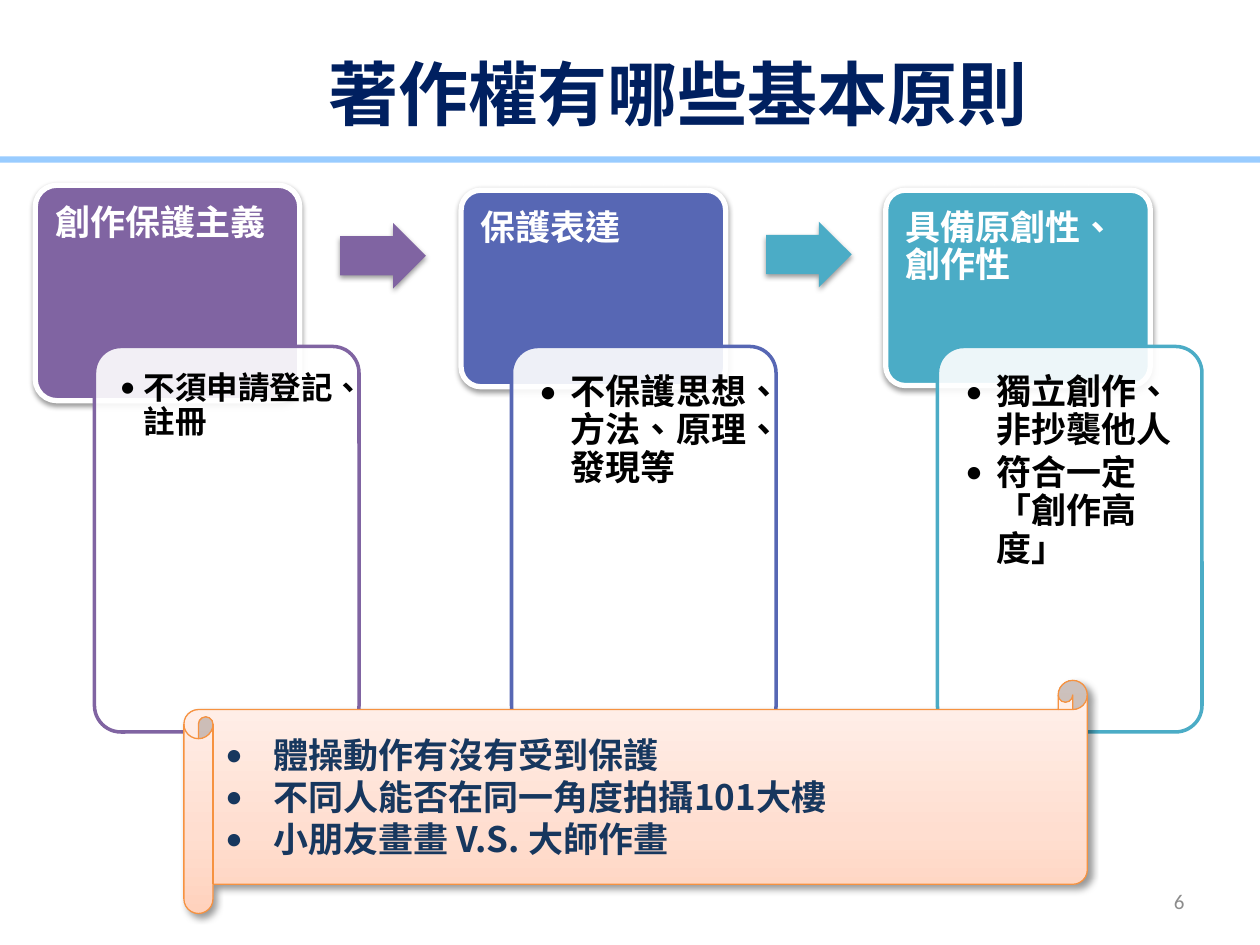
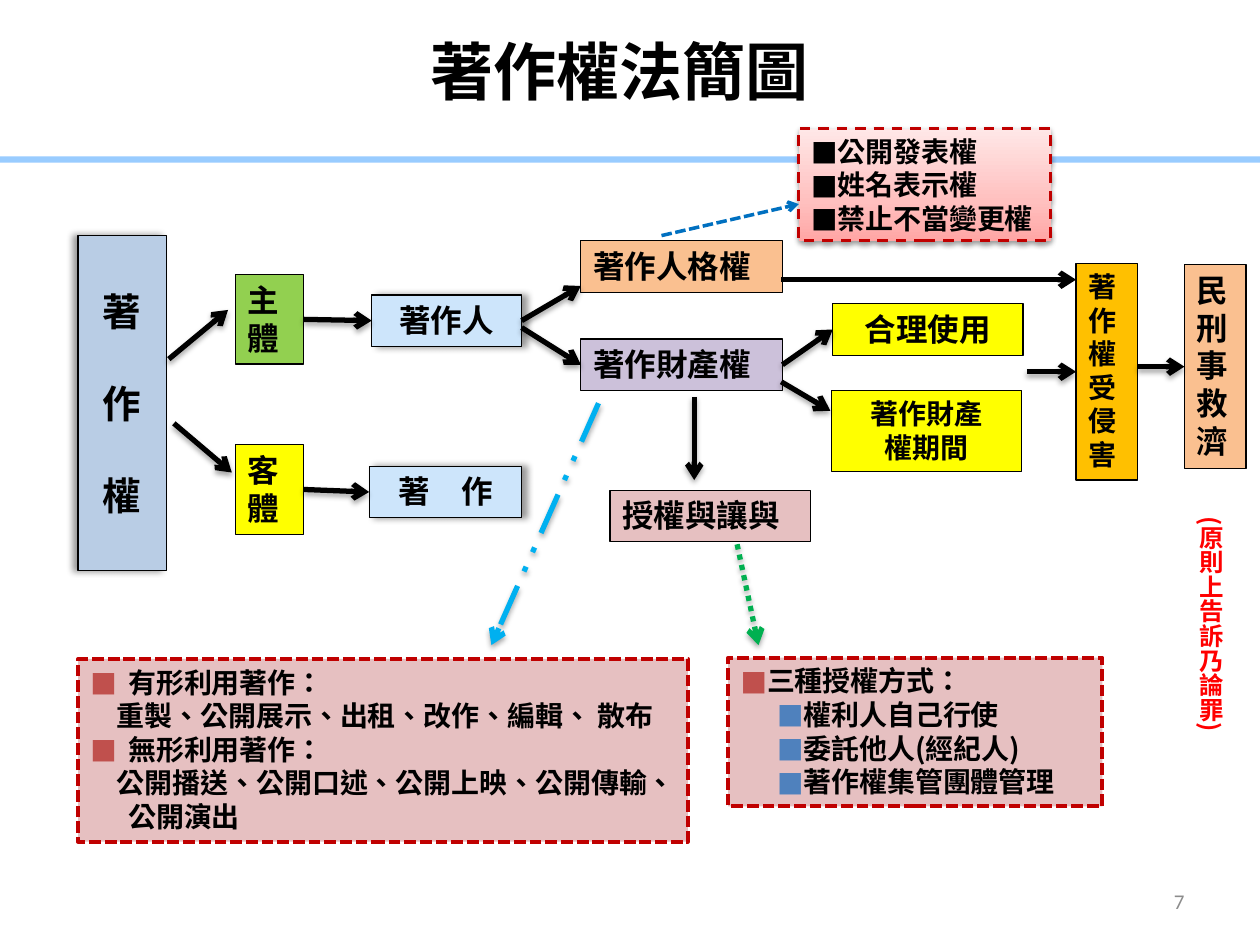
from dataclasses import dataclass
from typing import Optional

from lxml import etree
from pptx import Presentation
from pptx.dml.color import RGBColor
from pptx.enum.dml import MSO_LINE
from pptx.enum.shapes import MSO_CONNECTOR, MSO_SHAPE
from pptx.enum.text import MSO_ANCHOR, MSO_AUTO_SIZE, PP_ALIGN
from pptx.oxml.ns import qn
from pptx.util import Pt

PX = 9144
LEFT, CENTER, RIGHT = PP_ALIGN.LEFT, PP_ALIGN.CENTER, PP_ALIGN.RIGHT
TOP, MIDDLE = MSO_ANCHOR.TOP, MSO_ANCHOR.MIDDLE
RECTANGLE, ROUNDED = MSO_SHAPE.RECTANGLE, MSO_SHAPE.ROUNDED_RECTANGLE
RIGHT_ARROW, SCROLL = MSO_SHAPE.RIGHT_ARROW, MSO_SHAPE.HORIZONTAL_SCROLL
STRAIGHT = MSO_CONNECTOR.STRAIGHT
DASH, SHORT_DASH = MSO_LINE.DASH, MSO_LINE.SQUARE_DOT
DOT, DASH_DOT_DOT = MSO_LINE.ROUND_DOT, MSO_LINE.DASH_DOT_DOT
LEFT_SIDE, RIGHT_SIDE = 1, 3
FONT, LATIN_FONT = "Noto Sans CJK SC", "Calibri"

COLOURS = {
    "black": "000000", "white": "FFFFFF", "navy": "002060", "band": "99CCFF",
    "grey": "8C8C8C", "purple": "8064A2", "indigo": "5767B4", "teal": "4BACC6",
    "scroll_line": "F69240", "scroll_text": "17375E", "steel": "B9CDE5",
    "green": "92D050", "yellow": "FFFF00", "sky": "CDE5FB", "rose": "E6C0C1",
    "peach": "FAC090", "lilac": "CCC1DA", "amber": "FFC000", "crimson": "C00000",
    "bullet_red": "C0504D", "bullet_blue": "4F81BD", "cyan": "00B0F0",
    "emerald": "00B050", "blue": "0070C0", "red": "FF0000",
}
SCROLL_GRADIENT = ((0, "FFD2BD"), (35, "FFDED0"), (100, "FFF2ED"))
PINK_GRADIENT = ((0, "FFA6A5"), (35, "FFC0BF"), (100, "FFE7E7"))

Place = tuple[int, int, int, int]
Point = tuple[int, int]


@dataclass(frozen=True)
class Shadow:
    opacity: int
    blur: float
    distance: float
    angle: int


SOFT = Shadow(38, 3.1, 1.6, 90)
LINE_SHADOW = Shadow(35, 3.1, 1.8, 90)
CORNER, TO_LEFT, TO_RIGHT = (Shadow(40, 4, 3, angle) for angle in (45, 180, 0))


@dataclass(frozen=True)
class Style:
    size: int
    colour: str = "black"
    align: PP_ALIGN = LEFT
    bold: bool = True
    font: str = FONT
    line_spacing: float = 1.0
    gap: int = 0


@dataclass(frozen=True)
class Item:
    text: str
    margin: int = 0
    indent: int = 0
    bullet: str = ""
    bullet_colour: str = ""


@dataclass(frozen=True)
class Card:
    header: Place
    heading: str
    body_left: int
    points: tuple[str, ...]
    colour: str
    size: int
    inset: int
    hang: int


@dataclass(frozen=True)
class Box:
    name: str
    place: Place
    fill: str
    items: tuple[Item, ...]
    style: Style
    line: str = "black"
    width: float = 0.75
    dash: Optional[MSO_LINE] = None
    shadow: Optional[Shadow] = None
    anchor: MSO_ANCHOR = TOP


@dataclass(frozen=True)
class Arrow:
    begin: Point
    end: Point
    begin_box: str = ""
    end_box: str = ""
    colour: str = "black"
    width: float = 3
    dash: Optional[MSO_LINE] = None
    shadow: Optional[Shadow] = LINE_SHADOW


def rgb(name: str) -> RGBColor:
    return RGBColor.from_string(COLOURS[name])


def add_colour(parent, value: str, opacity: int = 100) -> None:
    colour = etree.SubElement(parent, qn("a:srgbClr"), val=value)
    if opacity < 100:
        etree.SubElement(colour, qn("a:alpha"), val=str(opacity * 1000))


def cast_shadow(effects, shadow: Shadow) -> None:
    outer = etree.SubElement(
        effects, qn("a:outerShdw"), blurRad=str(Pt(shadow.blur)),
        dist=str(Pt(shadow.distance)), dir=str(shadow.angle * 60000), rotWithShape="0")
    add_colour(outer, COLOURS["black"], shadow.opacity)


def set_line(line, colour: str, width: float, dash: Optional[MSO_LINE] = None) -> None:
    line.color.rgb = rgb(colour)
    line.width = Pt(width)
    if dash is not None:
        line.dash_style = dash


def add_figure(slide, kind: MSO_SHAPE, place: Place, fill: str, line: str = "",
               width: float = 0.75, dash: Optional[MSO_LINE] = None,
               shadow: Optional[Shadow] = None):
    shape = slide.shapes.add_shape(kind, *(PX * value for value in place))
    shape.shadow.inherit = False
    if fill:
        shape.fill.solid()
        shape.fill.fore_color.rgb = rgb(fill)
    if line:
        set_line(shape.line, line, width, dash)
    else:
        shape.line.fill.background()
    if shadow:
        cast_shadow(shape._element.spPr.find(qn("a:effectLst")), shadow)
    return shape


def fill_gradient(shape, stops: tuple[tuple[int, str], ...]) -> None:
    shape.fill.gradient()
    shape.fill.gradient_angle = 90
    stop_list = shape._element.spPr.find(".//" + qn("a:gsLst"))
    stop_list.clear()
    for position, colour in stops:
        add_colour(etree.SubElement(stop_list, qn("a:gs"), pos=str(position * 1000)), colour)


def add_bullet(paragraph, item: Item) -> None:
    properties = paragraph._p.get_or_add_pPr()
    properties.set("marL", str(item.margin * PX))
    properties.set("indent", str(item.indent * PX))
    if not item.bullet:
        etree.SubElement(properties, qn("a:buNone"))
        return
    if item.bullet_colour:
        add_colour(etree.SubElement(properties, qn("a:buClr")), COLOURS[item.bullet_colour])
    etree.SubElement(properties, qn("a:buFont"), typeface=LATIN_FONT)
    etree.SubElement(properties, qn("a:buChar"), char=item.bullet)


def write(shape, items: tuple[Item, ...], style: Style, anchor: MSO_ANCHOR = TOP,
          insets: Place = (10, 5, 10, 5)) -> None:
    frame = shape.text_frame
    frame.word_wrap = True
    frame.auto_size = MSO_AUTO_SIZE.NONE
    frame.vertical_anchor = anchor
    frame.margin_left, frame.margin_top, frame.margin_right, frame.margin_bottom = (
        PX * value for value in insets)
    for index, item in enumerate(items):
        paragraph = frame.add_paragraph() if index else frame.paragraphs[0]
        add_bullet(paragraph, item)
        paragraph.alignment = style.align
        paragraph.line_spacing = style.line_spacing
        paragraph.space_before = Pt(style.gap if index else 0)
        run = paragraph.add_run()
        run.text = item.text
        run.font.name = style.font
        run.font.size = Pt(style.size)
        run.font.bold = style.bold
        run.font.color.rgb = rgb(style.colour)
        properties = run._r.get_or_add_rPr()
        properties.set("lang", "zh-TW")
        properties.find(qn("a:latin")).addnext(
            etree.Element(qn("a:ea"), typeface=style.font))


def add_text(slide, place: Place, text: str, style: Style, anchor: MSO_ANCHOR = TOP):
    shape = slide.shapes.add_textbox(*(PX * value for value in place))
    write(shape, (Item(text),), style, anchor)
    return shape


def add_slide(presentation, title: str, place: Place, style: Style, number: int):
    slide = presentation.slides.add_slide(presentation.slide_layouts[5])
    add_figure(slide, RECTANGLE, (-4, 124, 1006, 5), "band")
    heading = slide.shapes.title
    heading.left, heading.top, heading.width, heading.height = (PX * v for v in place)
    write(heading, (Item(title),), style)
    add_text(slide, (717, 695, 233, 40), str(number),
             Style(12, "grey", RIGHT, False, LATIN_FONT), MIDDLE)
    return slide


def add_card(slide, card: Card) -> None:
    header = add_figure(slide, ROUNDED, card.header, card.colour, "white", 3, shadow=SOFT)
    header.adjustments[0] = 0.1
    write(header, (Item(card.heading),), Style(20, "white", line_spacing=0.9),
          insets=(11, 11, 11, 8))
    body = add_figure(slide, ROUNDED, (card.body_left, 275, 210, 306), "white", card.colour, 2)
    body.adjustments[0] = 0.1
    white = body._element.spPr.find(qn("a:solidFill")).find(qn("a:srgbClr"))
    etree.SubElement(white, qn("a:alpha"), val="90000")
    items = tuple(Item(point, card.hang, -card.hang, "•") for point in card.points)
    write(body, items, Style(card.size, line_spacing=0.9, gap=3),
          insets=(card.inset, card.inset, card.inset - 2, card.inset))


def add_box(slide, box: Box):
    shape = add_figure(slide, RECTANGLE, box.place, box.fill, box.line, box.width,
                       box.dash, box.shadow)
    write(shape, box.items, box.style, box.anchor)
    return shape


def add_arrow(slide, arrow: Arrow, boxes: dict) -> None:
    connector = slide.shapes.add_connector(
        STRAIGHT, *(PX * value for value in arrow.begin + arrow.end))
    if arrow.begin_box:
        connector.begin_connect(boxes[arrow.begin_box], RIGHT_SIDE)
    if arrow.end_box:
        connector.end_connect(boxes[arrow.end_box], LEFT_SIDE)
    set_line(connector.line, arrow.colour, arrow.width, arrow.dash)
    properties = connector._element.spPr
    etree.SubElement(properties.find(qn("a:ln")), qn("a:tailEnd"), type="arrow")
    effects = etree.SubElement(properties, qn("a:effectLst"))
    if arrow.shadow:
        cast_shadow(effects, arrow.shadow)


CARDS = (
    Card((28, 147, 210, 171), "創作保護主義", 75, ("不須申請登記、註冊",), "purple", 18, 14, 19),
    Card((366, 151, 210, 156), "保護表達", 406, ("不保護思想、方法、原理、發現等",),
         "indigo", 20, 16, 25),
    Card((703, 151, 210, 155), "具備原創性、創作性", 744,
         ("獨立創作、非抄襲他人", "符合一定「創作高度」"), "teal", 20, 16, 25),
)
CARD_ARROWS = (((270, 177, 68, 52), "purple"), ((608, 176, 68, 52), "teal"))
QUESTIONS = ("體操動作有沒有受到保護", "不同人能否在同一角度拍攝101大樓", "小朋友畫畫 V.S. 大師作畫")
MORAL_RIGHTS = ("公開發表權", "姓名表示權", "禁止不當變更權")
LICENCES = ("權利人自己行使", "委託他人(經紀人)", "著作權集管團體管理")

PLAIN, CENTERED, SMALL = Style(18), Style(18, align=CENTER), Style(16)
USES = (
    Item("有形利用著作：", 30, -30, "■", "bullet_red"),
    Item("重製、公開展示、出租、改作、編輯、 散布", 30, -9),
    Item("無形利用著作：", 30, -30, "■", "bullet_red"),
    Item("公開播送、公開口述、公開上映、公開傳輸、公開演出", 30, -9),
)
LICENCE_ITEMS = (Item("三種授權方式：", bullet="■", bullet_colour="bullet_red"),) + tuple(
    Item(text, 50, -21, "■", "bullet_blue") for text in LICENCES)
BOXES = (
    Box("copyright", (62, 187, 70, 266), "steel", tuple(map(Item, "著作權")),
        Style(22, align=CENTER, gap=26), shadow=TO_LEFT, anchor=MIDDLE),
    Box("subject", (187, 218, 54, 71), "green", (Item("主體"),), PLAIN),
    Box("object", (187, 353, 54, 71), "yellow", (Item("客體"),), PLAIN),
    Box("author", (295, 234, 119, 41), "sky", (Item("著作人"),), CENTERED, shadow=TO_RIGHT),
    Box("work", (293, 370, 121, 41), "sky", (Item("著　作"),), CENTERED, shadow=TO_RIGHT),
    Box("uses", (62, 523, 484, 145), "rose", USES, SMALL, "crimson", 2.25, SHORT_DASH),
    Box("moral", (461, 191, 160, 41), "peach", (Item("著作人格權"),), PLAIN),
    Box("economic", (461, 269, 160, 41), "lilac", (Item("著作財產權"),), PLAIN),
    Box("transfer", (484, 389, 159, 41), "rose", (Item("授權與讓與"),), PLAIN),
    Box("fair_use", (661, 241, 151, 41), "yellow", (Item("合理使用"),), CENTERED),
    Box("term", (660, 310, 151, 64), "yellow", (Item("著作財產"), Item("權期間")),
        Style(16, align=CENTER)),
    Box("infringed", (854, 209, 49, 172), "amber", (Item("著作權受侵害"),), SMALL),
    Box("remedies", (940, 210, 49, 162), "peach", (Item("民刑事救濟"),), PLAIN),
    Box("licences", (578, 522, 297, 118), "rose", LICENCE_ITEMS, SMALL,
        "crimson", 2.25, SHORT_DASH),
    Box("moral_rights", (634, 102, 200, 89), "",
        tuple(Item(text, 20, -20, "■") for text in MORAL_RIGHTS), SMALL,
        "crimson", 1.5, DASH, SOFT, MIDDLE),
)
ARROWS = (
    Arrow((138, 336), (184, 375)),
    Arrow((134, 285), (181, 246)),
    Arrow((241, 253), (295, 255), "subject", "author"),
    Arrow((241, 387), (293, 387), "object", "work"),
    Arrow((414, 255), (461, 227), "author"),
    Arrow((414, 260), (461, 294), end_box="economic"),
    Arrow((551, 315), (551, 381)),
    Arrow((621, 289), (660, 266), "economic", "fair_use"),
    Arrow((620, 303), (659, 326)),
    Arrow((815, 295), (854, 295), end_box="infringed"),
    Arrow((903, 291), (940, 291), end_box="remedies"),
    Arrow((475, 320), (390, 512), colour="cyan", dash=DASH_DOT_DOT),
    Arrow((585, 432), (602, 512), colour="emerald", dash=DOT),
    Arrow((525, 187), (634, 162), colour="blue", width=2, dash=SHORT_DASH, shadow=None),
    Arrow((620, 222), (854, 222), shadow=None),
)


def build_principles(presentation) -> None:
    slide = add_slide(presentation, "著作權有哪些基本原則", (88, 35, 900, 80),
                      Style(40, "navy", CENTER), 6)
    for card in CARDS:
        add_card(slide, card)
    for place, colour in CARD_ARROWS:
        arrow = add_figure(slide, RIGHT_ARROW, place, colour, shadow=SOFT)
        arrow.adjustments[0] = 0.6
    scroll = add_figure(slide, SCROLL, (146, 540, 717, 185), "", "scroll_line", shadow=CORNER)
    fill_gradient(scroll, SCROLL_GRADIENT)
    write(scroll, tuple(Item(text, 38, -38, "•") for text in QUESTIONS),
          Style(20, "scroll_text"), MIDDLE)


def build_overview(presentation) -> None:
    slide = add_slide(presentation, "著作權法簡圖", (42, 21, 900, 96),
                      Style(36, align=CENTER), 7)
    boxes = {box.name: add_box(slide, box) for box in BOXES}
    fill_gradient(boxes["moral_rights"], PINK_GRADIENT)
    for arrow in ARROWS:
        add_arrow(slide, arrow, boxes)
    note = add_text(slide, (934, 400, 44, 195), "(原則上告訴乃論罪)",
                    Style(14, "red", CENTER))
    note.text_frame._txBody.bodyPr.set("vert", "eaVert")


def main() -> None:
    presentation = Presentation()
    presentation.slide_width, presentation.slide_height = 1000 * PX, 750 * PX
    build_principles(presentation)
    build_overview(presentation)
    presentation.save("out.pptx")


if __name__ == "__main__":
    main()
